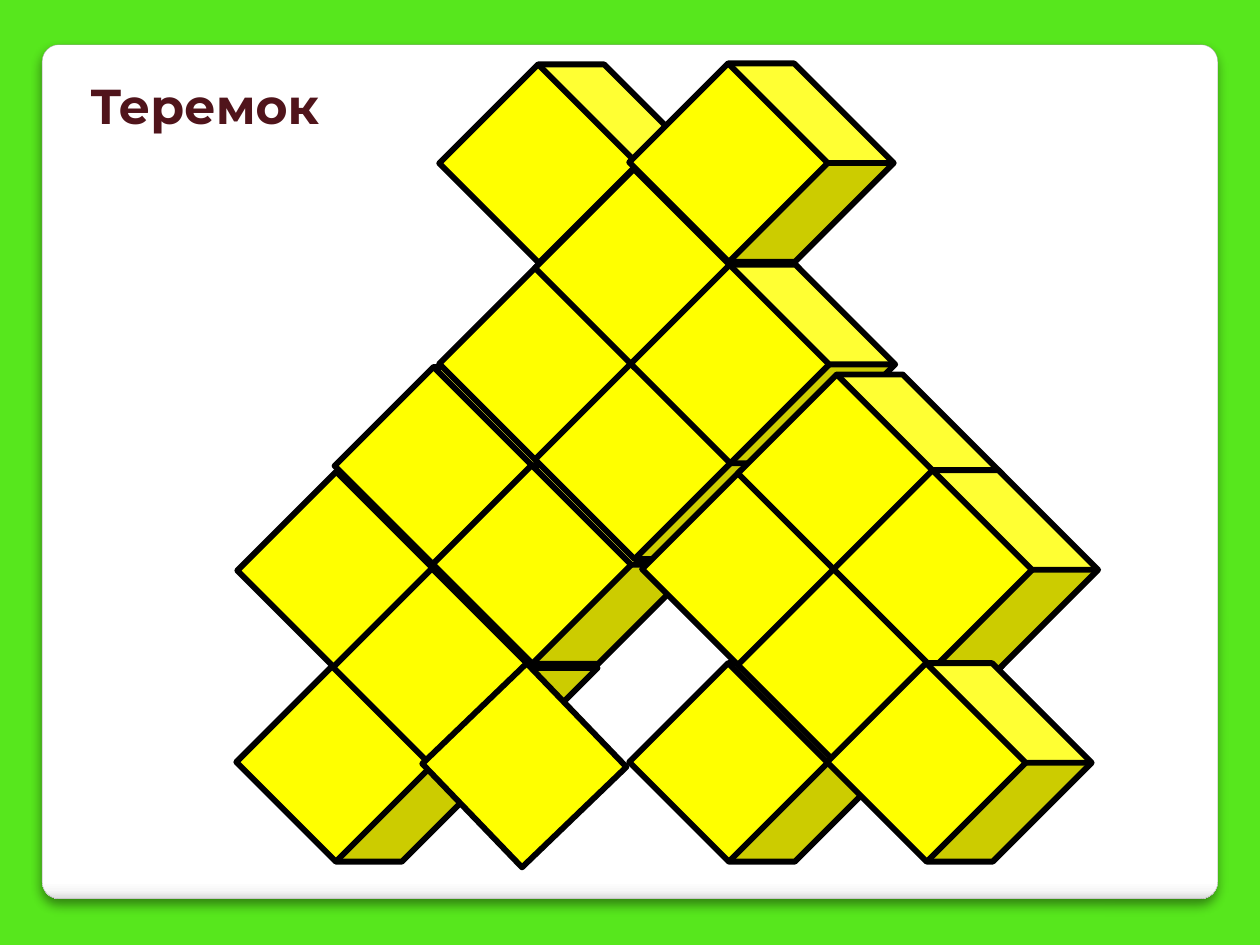
from lxml import etree
from pptx import Presentation
from pptx.dml.color import RGBColor
from pptx.enum import shapes, text
from pptx.oxml import ns
from pptx.util import Cm, Pt

GREEN = RGBColor(0x57, 0xE7, 0x1D)
YELLOW = RGBColor(0xFF, 0xFF, 0x00)
BLACK = RGBColor(0x00, 0x00, 0x00)
GREY = RGBColor(0xA4, 0xA4, 0xA4)
MAROON = RGBColor(0x50, 0x14, 0x1B)
WHITE = RGBColor(0xFF, 0xFF, 0xFF)
PALE = RGBColor(0xF7, 0xF7, 0xF7)
SHADE = RGBColor(0xDA, 0xDA, 0xDA)

CUBE_SIZE = (3.78, 3.76)
STEP = 1.93  # half the diagonal pitch between neighbouring cubes


def add_child(parent, tag, **attributes):
    return etree.SubElement(parent, ns.qn(tag), attributes)


def add_panel(page):
    """White card with a shaded bottom edge and a soft shadow."""
    panel = page.shapes.add_shape(shapes.MSO_SHAPE.ROUNDED_RECTANGLE,
                                  Cm(0.85), Cm(0.9), Cm(23.7), Cm(17.22))
    panel.adjustments[0] = 0.02
    panel.line.color.rgb = GREY
    panel.line.width = Pt(0.16)

    panel.fill.gradient()
    panel.fill.gradient_angle = 270
    stops = panel.element.spPr.find(ns.qn("a:gradFill")).find(ns.qn("a:gsLst"))
    stops.clear()
    for percent, color in ((0, WHITE), (98, WHITE), (99, PALE), (100, SHADE)):
        stop = add_child(stops, "a:gs", pos=str(percent * 1000))
        add_child(stop, "a:srgbClr", val=str(color))

    panel.shadow.inherit = False
    effects = panel.element.spPr.find(ns.qn("a:effectLst"))
    shadow = add_child(effects, "a:outerShdw", blurRad=str(Pt(6)),
                       dist=str(Pt(4)), dir="5400000", rotWithShape="0")
    color = add_child(shadow, "a:srgbClr", val=str(BLACK))
    add_child(color, "a:alpha", val="44000")


def add_block(page, kind, left, top, width, height, rotation):
    block = page.shapes.add_shape(kind, Cm(left), Cm(top), Cm(width), Cm(height))
    block.rotation = rotation
    block.shadow.inherit = False
    block.fill.solid()
    block.fill.fore_color.rgb = YELLOW
    block.line.color.rgb = BLACK
    block.line.width = Pt(3.35)
    add_child(block.element.spPr.find(ns.qn("a:ln")), "a:round")


def diamond(left, top):
    """Places of four cubes, from back to front: left, bottom, top, right."""
    return [(left + column * STEP, top + row * STEP)
            for column, row in ((0, 0), (1, 1), (1, -1), (2, 0))]


def add_tower(page):
    places = [
        (9.63, 1.42), (13.46, 13.49), (5.54, 13.49),
        (5.56, 9.63), (7.49, 11.58), (7.52, 7.52), (9.5, 9.5),
        *diamond(9.63, 5.46),
        *diamond(13.72, 9.6),
        (17.45, 13.49), (13.46, 1.4),
    ]
    for left, top in places:
        add_block(page, shapes.MSO_SHAPE.CUBE, left, top, *CUBE_SIZE, 45)
    add_block(page, shapes.MSO_SHAPE.RECTANGLE, 9.12, 13.97, 2.9, 2.92, 46.1)


def set_title(page, wording):
    title = page.shapes.title
    page.shapes.element.append(title.element)  # in front of the panel
    title.left, title.top = Cm(1.57), Cm(1.4)
    title.width, title.height = Cm(5.41), Cm(1.45)
    frame = title.text_frame
    frame.text = wording
    frame.word_wrap = False
    frame.auto_size = text.MSO_AUTO_SIZE.SHAPE_TO_FIT_TEXT
    frame.vertical_anchor = text.MSO_ANCHOR.TOP
    para = frame.paragraphs[0]
    para.alignment = text.PP_ALIGN.LEFT
    font = para.runs[0].font
    font.name = "Montserrat"
    font.size = Pt(28)
    font.bold = True
    font.color.rgb = MAROON


def main():
    deck = Presentation()
    deck.slide_width, deck.slide_height = Cm(25.4), Cm(19.05)
    page = deck.slides.add_slide(deck.slide_layouts.get_by_name("Title Only"))
    page.background.fill.solid()
    page.background.fill.fore_color.rgb = GREEN
    add_panel(page)
    add_tower(page)
    set_title(page, "Теремок")
    deck.save("out.pptx")


if __name__ == "__main__":
    main()
